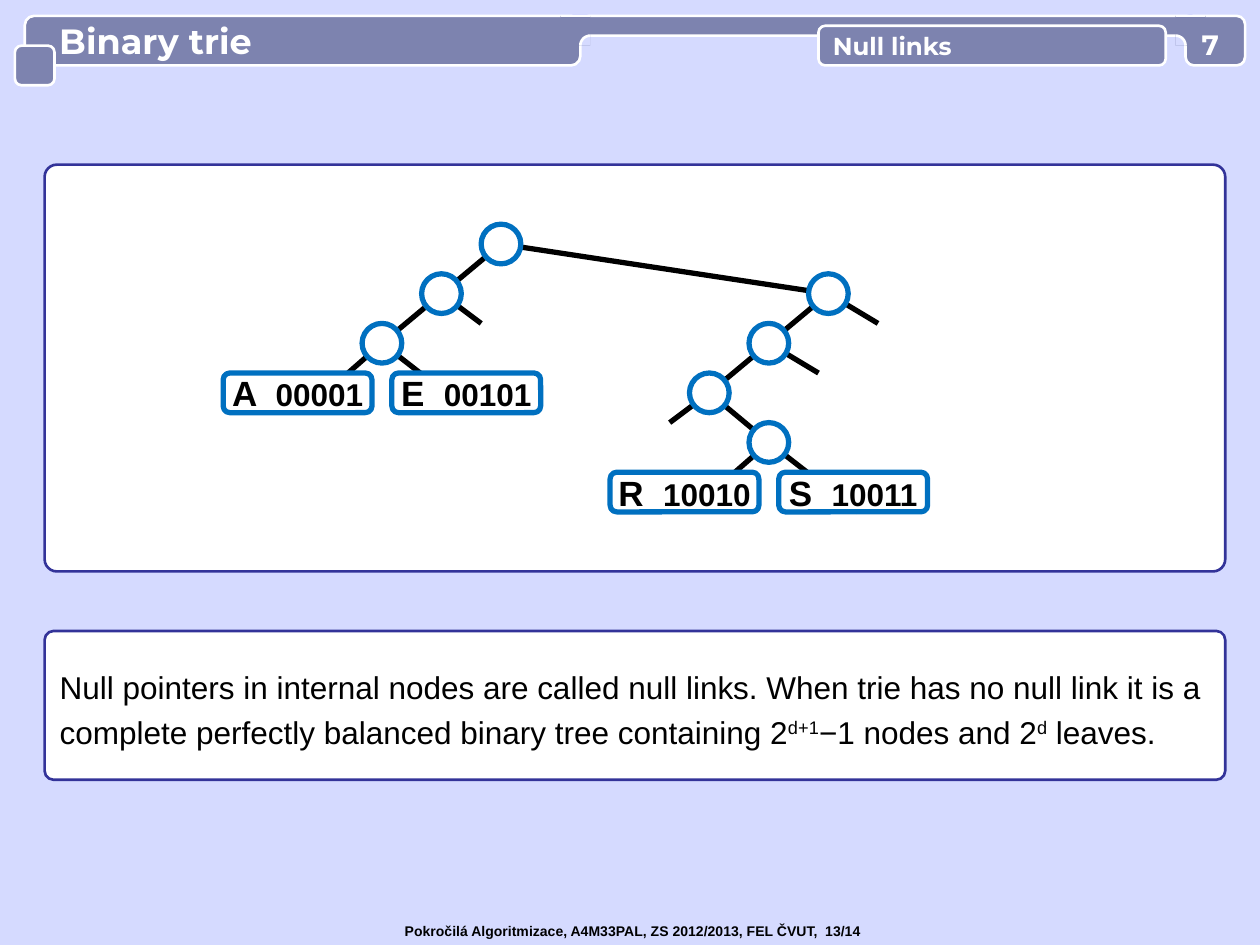
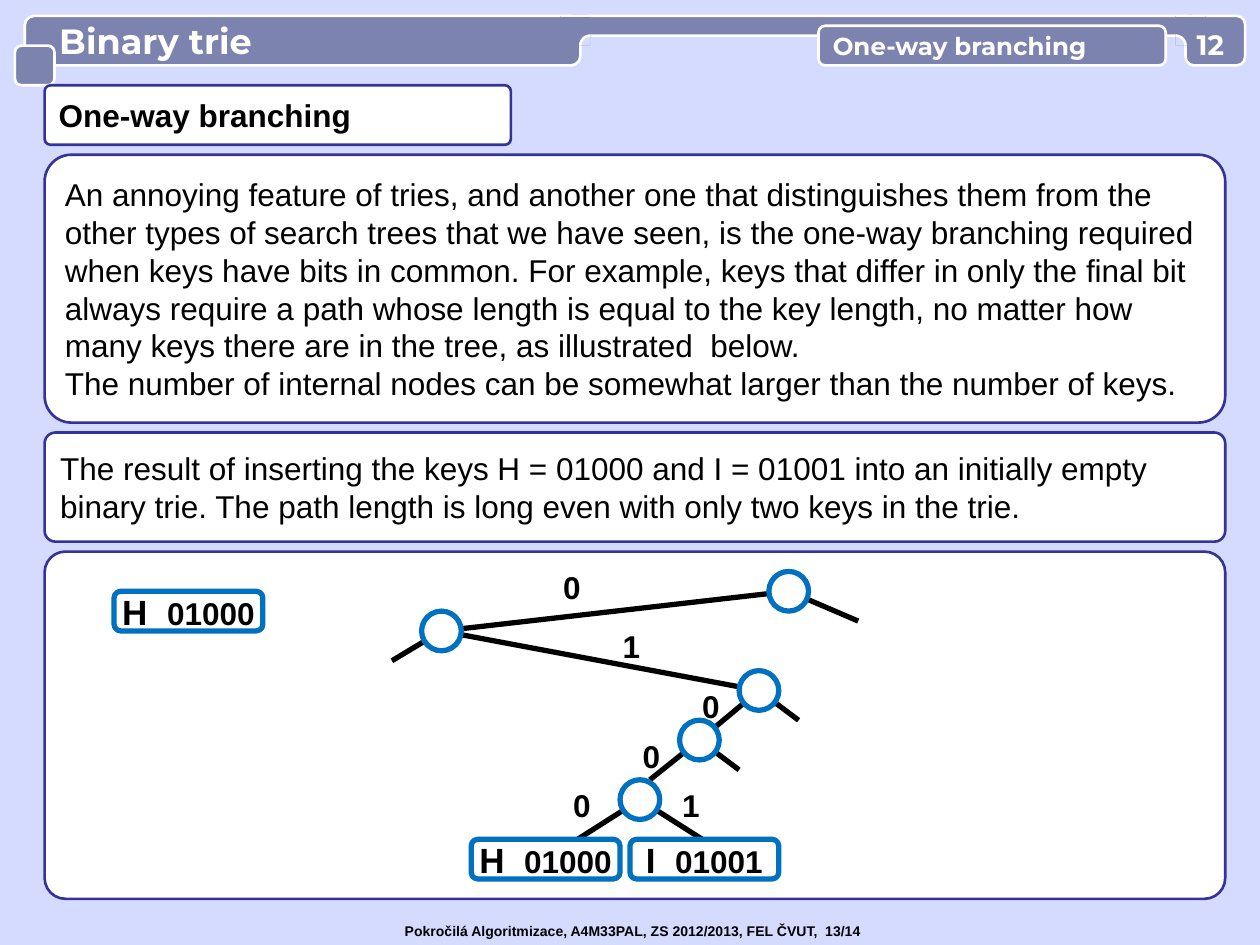
from math import cos, pi, sin

from lxml.etree import SubElement
from pptx import Presentation
from pptx.dml.color import RGBColor
from pptx.enum.shapes import MSO_CONNECTOR as LINK, MSO_SHAPE as SHAPE
from pptx.enum.text import MSO_ANCHOR as ANCHOR, PP_ALIGN as ALIGN
from pptx.oxml.ns import qn
from pptx.util import Inches, Pt

PX = 7200
LAVENDER = RGBColor(0xD5, 0xDA, 0xFF)
SLATE = RGBColor(0x7D, 0x83, 0xAF)
NAVY = RGBColor(0x33, 0x33, 0x99)
BLUE = RGBColor(0x00, 0x70, 0xC0)
BLACK = RGBColor(0, 0, 0)
WHITE = RGBColor(255, 255, 255)
BODY_FONT, HEAD_FONT = "Arial", "Montserrat"
NODE = 40
LEAF_W, LEAF_H = 150, 40
COURSE = "Pokročilá Algoritmizace, A4M33PAL, ZS 2012/2013, FEL ČVUT,  13/14"


def px(*lengths):
    return [round(length * PX) for length in lengths]


def paint(shape, fill=None, line=None, width=1.5):
    shape.shadow.inherit = False
    if fill is None:
        shape.fill.background()
    else:
        shape.fill.solid()
        shape.fill.fore_color.rgb = fill
    if line is None:
        shape.line.fill.background()
    else:
        shape.line.color.rgb = line
        shape.line.width = Pt(width)


def add_box(slide, kind, box, fill, line=None, width=1.5, rounding=None):
    shape = slide.shapes.add_shape(kind, *px(*box))
    paint(shape, fill, line, width)
    if rounding is not None:
        shape.adjustments[0] = rounding
    return shape


def add_line(slide, start, end, color=BLACK, width=3):
    line = slide.shapes.add_connector(LINK.STRAIGHT, *px(*start, *end))
    line.line.color.rgb = color
    line.line.width = Pt(width)
    SubElement(line._element.spPr, qn("a:effectLst"))


def set_frame(shape, margins=None):
    frame = shape.text_frame
    frame.word_wrap = True
    frame.vertical_anchor = ANCHOR.MIDDLE
    if margins is not None:
        frame.margin_left, frame.margin_right = px(*margins)
        frame.margin_top = frame.margin_bottom = 0
    return frame


def add_run(paragraph, text, size, color=BLACK, bold=False, font=BODY_FONT, raised=False):
    run = paragraph.add_run()
    run.text = text
    run.font.name = font
    run.font.size = Pt(size)
    run.font.bold = bold
    run.font.color.rgb = color
    if raised:
        run._r.get_or_add_rPr().set("baseline", "30000")


def add_words(shape, text, size, align=ALIGN.LEFT, margins=None, **style):
    paragraph = set_frame(shape, margins).paragraphs[0]
    paragraph.alignment = align
    add_run(paragraph, text, size, **style)


def add_label(slide, box, text, size, align=ALIGN.CENTER, margins=(0, 0), **style):
    label = slide.shapes.add_textbox(*px(*box))
    add_words(label, text, size, align, margins, bold=True, **style)


def add_panel(slide, box, rounding, paragraphs=(), spacing=None, bold=False):
    panel = add_box(slide, SHAPE.ROUNDED_RECTANGLE, box, WHITE, NAVY, rounding=rounding)
    frame = set_frame(panel)
    for index, runs in enumerate(paragraphs):
        paragraph = frame.add_paragraph() if index else frame.paragraphs[0]
        paragraph.alignment = ALIGN.LEFT
        paragraph.line_spacing = spacing
        for text, raised in runs:
            add_run(paragraph, text, 18, bold=bold, raised=raised)


def add_arc(slide, points, close):
    builder = slide.shapes.build_freeform(*px(*points[0]), scale=1.0)
    builder.add_line_segments([px(*point) for point in points[1:]], close=close)
    return builder.convert_to_shape()


def add_joint(slide, edge, side):
    add_box(slide, SHAPE.RECTANGLE, (min(edge, edge + 30 * side), 16, 30, 30), SLATE)
    add_line(slide, (edge, 16), (edge + 30 * side, 16), WHITE, 1.5)
    arc = [(edge + side * 10 * sin(step * pi / 16), 46 - 10 * cos(step * pi / 16))
           for step in range(9)]
    paint(add_arc(slide, arc + [(edge, 46)], True), LAVENDER)
    paint(add_arc(slide, arc, False), line=WHITE)


def add_band(slide, box, rounding):
    return add_box(slide, SHAPE.ROUNDED_RECTANGLE, box, SLATE, WHITE, rounding=rounding)


def add_slide(deck, topic, number):
    slide = deck.slides.add_slide(deck.slide_layouts[6])
    slide.background.fill.solid()
    slide.background.fill.fore_color.rgb = LAVENDER
    heading = dict(color=WHITE, bold=True, font=HEAD_FONT)
    title = add_band(slide, (25, 16, 560, 50), 0.19)
    add_words(title, "Binary trie", 20, margins=(32, 0), **heading)
    add_band(slide, (585, 16, 620, 20), 0.5)
    add_joint(slide, 595, -1)
    add_band(slide, (15, 46, 40, 40), 0.17)
    add_band(slide, (1195, 16, 60, 50), 0.17)
    add_joint(slide, 1185, 1)
    add_words(add_band(slide, (825, 26, 350, 40), 0.17), topic, 14, **heading)
    add_label(slide, (1195, 28, 50, 34), number, 16, color=WHITE, font=HEAD_FONT)
    add_label(slide, (395, 923, 495, 30), COURSE, 8, ALIGN.LEFT, (13, 0))
    return slide


def add_node(slide, center):
    x, y = center
    add_box(slide, SHAPE.OVAL, (x - NODE / 2, y - NODE / 2, NODE, NODE), WHITE, BLUE, 3)


def add_leaf(slide, corner, key, bits):
    leaf = add_box(slide, SHAPE.ROUNDED_RECTANGLE, (*corner, LEAF_W, LEAF_H), WHITE, BLUE, 3)
    add_words(leaf, f"{key}  ", 20, ALIGN.CENTER, (0, 0), bold=True)
    add_run(leaf.text_frame.paragraphs[0], bits, 18, bold=True)


def add_trie(slide, nodes, edges, null_links, leaves):
    for parent, child in edges:
        add_line(slide, nodes[parent], nodes[child])
    for parent, dx, dy in null_links:
        x, y = nodes[parent]
        add_line(slide, (x, y), (x + dx, y + dy))
    for parent, (reach_x, reach_y), _, _, _ in leaves:
        x, y = nodes[parent]
        add_line(slide, (x, y), (x + reach_x, y + reach_y))
    for center in nodes.values():
        add_node(slide, center)
    for parent, _, (dx, dy), key, bits in leaves:
        x, y = nodes[parent]
        add_leaf(slide, (x + dx, y + dy), key, bits)


def build_null_links(deck):
    slide = add_slide(deck, "Null links", "7")
    add_panel(slide, (45, 166, 1190, 410), 0.03)
    nodes = {"root": (505, 246), "0": (445, 296), "00": (385, 346), "1": (835, 296),
             "10": (775, 346), "100": (715, 396), "1001": (775, 446)}
    edges = [("root", "0"), ("0", "00"), ("root", "1"), ("1", "10"),
             ("10", "100"), ("100", "1001")]
    null_links = [("0", 40, 30), ("1", 50, 30), ("10", 50, 30), ("100", -40, 30)]
    left, right = ((-80, 70), (-160, 30)), ((90, 70), (10, 30))
    leaves = [("00", *left, "A", "00001"), ("00", *right, "E", "00101"),
              ("1001", *left, "R", "10010"), ("1001", *right, "S", "10011")]
    add_trie(slide, nodes, edges, null_links, leaves)
    add_panel(slide, (45, 636, 1190, 150), 0.06, [[
        ("Null pointers in internal nodes are called null links. When trie has no null "
         "link it is a complete perfectly balanced binary tree containing 2", False),
        ("d+1", True), ("−1 nodes and 2", False), ("d", True), (" leaves.", False)]], 1.2)


def build_one_way_branching(deck):
    slide = add_slide(deck, "One-way branching", "12")
    add_panel(slide, (45, 86, 470, 60), 0.1, [[("One-way branching", False)]], bold=True)
    add_panel(slide, (45, 156, 1190, 270), 0.1, [
        [("An annoying feature of tries, and another one that distinguishes them from the "
          "other types of search trees that we have seen, is the one-way branching required "
          "when keys have bits in common. For example, keys that differ in only the final "
          "bit always require a path whose length is equal to the key length, no matter how "
          "many keys there are in the tree, as illustrated  below.", False)],
        [("The number of internal nodes can be somewhat larger than the number of keys.",
          False)]])
    add_panel(slide, (45, 436, 1190, 110), 0.1, [[
        ("The result of inserting the keys H = 01000 and I = 01001 into an initially empty "
         "binary trie. The path length is long even with only two keys in the trie.",
         False)]])
    add_panel(slide, (45, 556, 1190, 350), 0.06)
    add_line(slide, (705, 746), (655, 786))
    nodes = {"root": (795, 596), "0": (445, 636), "01": (765, 696),
             "010": (705, 746), "0100": (645, 806)}
    edges = [("root", "0"), ("0", "01"), ("01", "010")]
    null_links = [("root", 70, 30), ("0", -50, 30), ("01", 40, 30), ("010", 40, 30)]
    leaves = [("0100", (-110, 70), (-170, 40), "H", "01000"),
              ("0100", (110, 70), (-10, 40), "I", "01001")]
    add_trie(slide, nodes, edges, null_links, leaves)
    add_leaf(slide, (115, 596), "H", "01000")
    for x, y, bit in [(555, 566, "0"), (615, 626, "1"), (695, 686, "0"),
                      (635, 736, "0"), (565, 786, "0"), (675, 786, "1")]:
        add_label(slide, (x, y, 43, 51), bit, 18)


def main():
    deck = Presentation()
    deck.slide_width, deck.slide_height = Inches(10), Inches(7.5)
    build_null_links(deck)
    build_one_way_branching(deck)
    deck.save("out.pptx")


if __name__ == "__main__":
    main()
